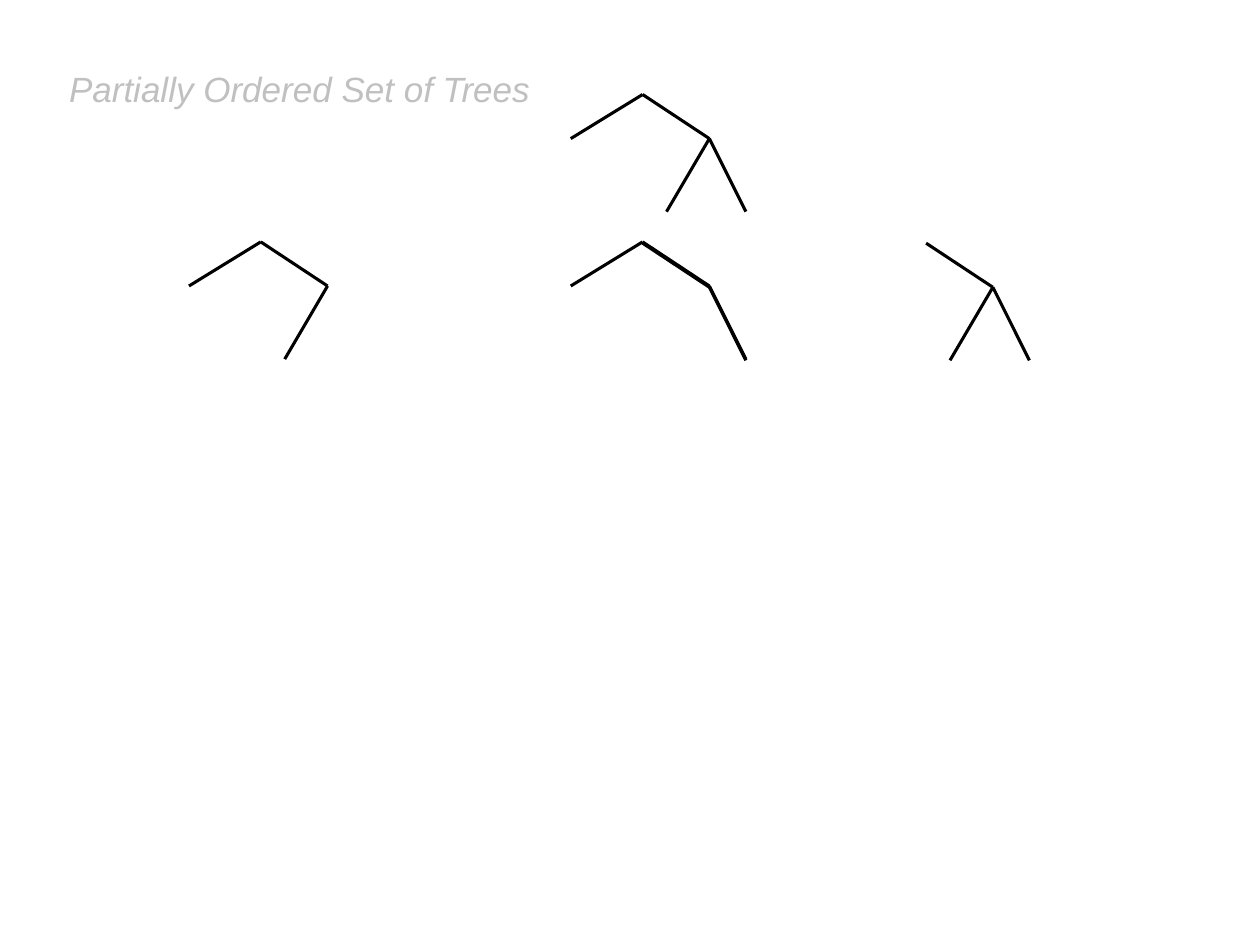
from dataclasses import dataclass

from lxml.etree import SubElement
from pptx import Presentation
from pptx.dml.color import RGBColor
from pptx.enum.shapes import MSO_CONNECTOR
from pptx.enum.text import MSO_AUTO_SIZE
from pptx.oxml.ns import qn
from pptx.slide import Slide
from pptx.util import Inches, Pt

COLORS = {"title": "C0C0C0", "edge": "000000"}
NODES = {
    "root": (0, 0),
    "left": (-0.57, 0.35),
    "right": (0.53, 0.35),
    "inner": (0.19, 0.93),
    "outer": (0.82, 0.93),
}
EDGES = {
    "a": ("root", "left"),
    "b": ("root", "right"),
    "c": ("right", "inner"),
    "d": ("right", "outer"),
}


@dataclass
class Tree:
    """A tree given by its root point and the edges it keeps."""

    x: float
    y: float
    edges: str


TREES = [
    Tree(5.1, 0.75, "abcd"),
    Tree(5.1, 1.92, "abd"),
    Tree(5.1, 1.93, "bd"),
    Tree(2.07, 1.92, "abc"),
    Tree(7.35, 1.93, "bcd"),
]


def add_text(slide: Slide, text: str, *, left: float, top: float, width: float,
             height: float, size: float, color: str, font: str = "Arial",
             italic: bool = False) -> None:
    """Add a wrapped text box with one formatted run."""
    box = slide.shapes.add_textbox(Inches(left), Inches(top), Inches(width), Inches(height))
    frame = box.text_frame
    frame.word_wrap = True
    frame.auto_size = MSO_AUTO_SIZE.SHAPE_TO_FIT_TEXT
    run = frame.paragraphs[0].add_run()
    run.text = text
    run.font.name = font
    run.font.size = Pt(size)
    run.font.italic = italic
    run.font.color.rgb = RGBColor.from_string(COLORS[color])


def add_tree(slide: Slide, tree: Tree) -> None:
    """Draw the kept edges of a tree as straight lines."""
    for key in tree.edges:
        (x1, y1), (x2, y2) = (NODES[name] for name in EDGES[key])
        edge = slide.shapes.add_connector(
            MSO_CONNECTOR.STRAIGHT,
            Inches(tree.x + x1), Inches(tree.y + y1),
            Inches(tree.x + x2), Inches(tree.y + y2),
        )
        edge.line.width = Pt(1.75)
        edge.line.color.rgb = RGBColor.from_string(COLORS["edge"])
        SubElement(edge._element.spPr, qn("a:effectLst"))


def main() -> None:
    """Build the slide and save it."""
    deck = Presentation()
    deck.slide_width, deck.slide_height = Inches(10), Inches(7.5)
    slide = deck.slides.add_slide(deck.slide_layouts[6])
    add_text(slide, "Partially Ordered Set of Trees", left=0.45, top=0.49,
             width=9.16, height=0.44, size=20, color="title", italic=True)
    for tree in TREES:
        add_tree(slide, tree)
    deck.save("out.pptx")


if __name__ == "__main__":
    main()
